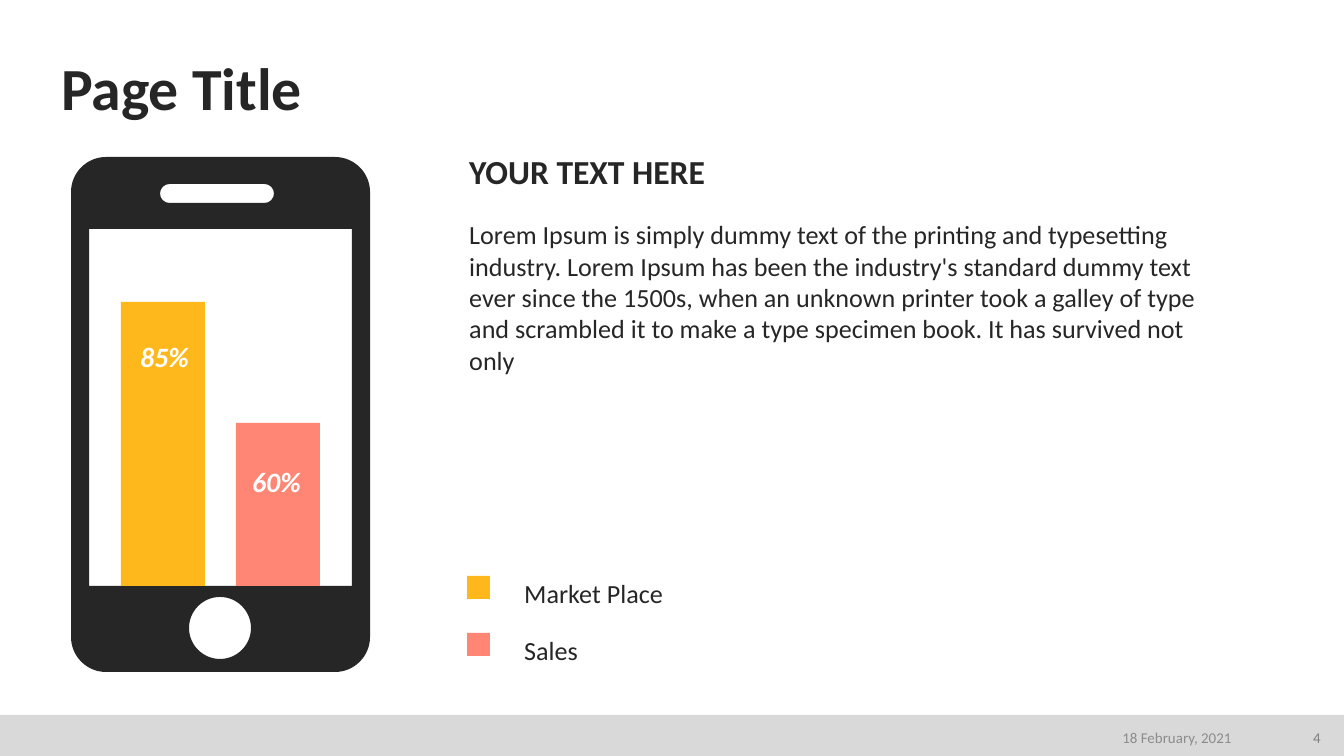
from lxml import etree
from pptx import Presentation
from pptx.dml.color import RGBColor
from pptx.enum.shapes import MSO_SHAPE as SHAPE
from pptx.enum.text import MSO_ANCHOR as ANCHOR, PP_ALIGN as ALIGN
from pptx.oxml.ns import qn
from pptx.util import Pt

SCALE = 914400 / 134.4
DARK, WHITE, GREY = "262626", "FFFFFF", "D9D9D9"
AMBER, CORAL = "FFB81C", "FF8674"


def emu(px):
    return round(px * SCALE)


def rgb(value):
    return RGBColor.from_string(value)


def rounded_outline(x, y, w, h, radius):
    """Return the start point and the (end, corner) segments; a corner marks a curve."""
    right, bottom, r = x + w, y + h, radius
    sides = [((right - r, y), (right, y), (right, y + r)),
             ((right, bottom - r), (right, bottom), (right - r, bottom)),
             ((x + r, bottom), (x, bottom), (x, bottom - r)),
             ((x, y + r), (x, y), (x + r, y))]
    segments, here = [], (x + r, y)
    for before, corner, after in sides:
        if before != here:
            segments.append((before, None))
        if r:
            segments.append((after, corner))
        here = after
    return (x + r, y), segments


def write(tf, text, size=14, color=DARK, bold=False, italic=False, align=ALIGN.LEFT, spacing=None):
    p = tf.paragraphs[0]
    p.alignment = align
    if spacing:
        p.line_spacing = spacing
    r = p.add_run()
    r.text = text
    font = r.font
    font.name, font.size, font.bold, font.italic = "Calibri", Pt(size), bold, italic
    font.color.rgb = rgb(color)


class SlideBuilder:
    """Draws styled elements on one slide, with lengths in px."""

    def __init__(self, slide):
        self.shapes = slide.shapes

    def paint(self, sp, color):
        sp.shadow.inherit = False
        sp.fill.solid()
        sp.fill.fore_color.rgb = rgb(color)
        sp.line.fill.background()

    def rect(self, x, y, w, h, color):
        sp = self.shapes.add_shape(SHAPE.RECTANGLE, emu(x), emu(y), emu(w), emu(h))
        self.paint(sp, color)

    def outline(self, contours, color):
        builder = self.shapes.build_freeform(*map(emu, contours[0][0]))
        corners = []
        for index, (start, segments) in enumerate(contours):
            if index:
                builder.move_to(*map(emu, start))
            builder.add_line_segments([tuple(map(emu, end)) for end, _ in segments], close=True)
            corners += [corner for _, corner in segments]
        sp = builder.convert_to_shape()
        self.paint(sp, color)
        for line, corner in zip(list(sp._element.iter(qn("a:lnTo"))), corners):
            if corner:
                self.curve(line, emu(corner[0]) - sp.left, emu(corner[1]) - sp.top)

    def curve(self, line, corner_x, corner_y):
        before, end = line.getprevious()[-1], line[0]
        line.tag = qn("a:cubicBezTo")
        for index, point in enumerate((before, end)):
            x, y = int(point.get("x")), int(point.get("y"))
            control = etree.Element(qn("a:pt"), x=str(round(x + 0.55 * (corner_x - x))),
                                    y=str(round(y + 0.55 * (corner_y - y))))
            line.insert(index, control)

    def text(self, x, y, w, h, text, anchor=ANCHOR.TOP, inset=True, **style):
        tf = self.shapes.add_textbox(emu(x), emu(y), emu(w), emu(h)).text_frame
        tf.word_wrap = True
        tf.vertical_anchor = anchor
        if not inset:
            tf.margin_left = tf.margin_right = tf.margin_top = tf.margin_bottom = 0
        write(tf, text, **style)


def main():
    prs = Presentation()
    prs.slide_width, prs.slide_height = emu(1344), emu(756)
    s = SlideBuilder(prs.slides.add_slide(prs.slide_layouts[6]))

    s.rect(0, 715, 1344, 41, GREY)
    s.text(456, 212, 782, 172,
           "Lorem Ipsum is simply dummy text of the printing and typesetting industry. "
           "Lorem Ipsum has been the industry's standard dummy text ever since the 1500s, "
           "when an unknown printer took a galley of type and scrambled it to make a type "
           "specimen book. It has survived not only")
    s.text(456, 144, 810, 54, "YOUR TEXT HERE", size=18, bold=True)

    body = rounded_outline(71, 157, 299, 515, 35)
    speaker = rounded_outline(160, 184, 114, 19, 9.5)
    button = rounded_outline(189, 597, 62, 62, 31)
    screen = rounded_outline(89, 229, 263, 357, 0)
    s.outline([body, speaker, button, screen], DARK)

    screen_bottom = 586
    series = [("Market Place", "85%", AMBER, 121, 284, 106, 333, 117),
              ("Sales", "60%", CORAL, 236, 163, 220, 458, 113)]
    for _, _, color, bar_x, bar_h, *_ in series:
        s.rect(bar_x, screen_bottom - bar_h, 84, bar_h, color)
    for _, value, *_, label_x, label_y, label_w in series:
        s.text(label_x, label_y, label_w, 42, value, size=15, color=WHITE,
               bold=True, italic=True, align=ALIGN.CENTER)
    for row, (name, _, color, *_) in enumerate(series):
        s.text(511, 571 + 57 * row, 423, 46, name)
        s.rect(467, 576 + 57 * row, 23, 23, color)

    s.text(61, 53, 1223, 70, "Page Title", anchor=ANCHOR.BOTTOM, inset=False,
           size=32, bold=True, spacing=0.9)
    footer = dict(anchor=ANCHOR.MIDDLE, size=8, align=ALIGN.RIGHT)
    s.text(943, 720, 302, 35, "18 February, 2021", color="8C8C8C", **footer)
    s.text(1284, 720, 50, 35, "4", color="808080", **footer)

    prs.save("out.pptx")


if __name__ == "__main__":
    main()
